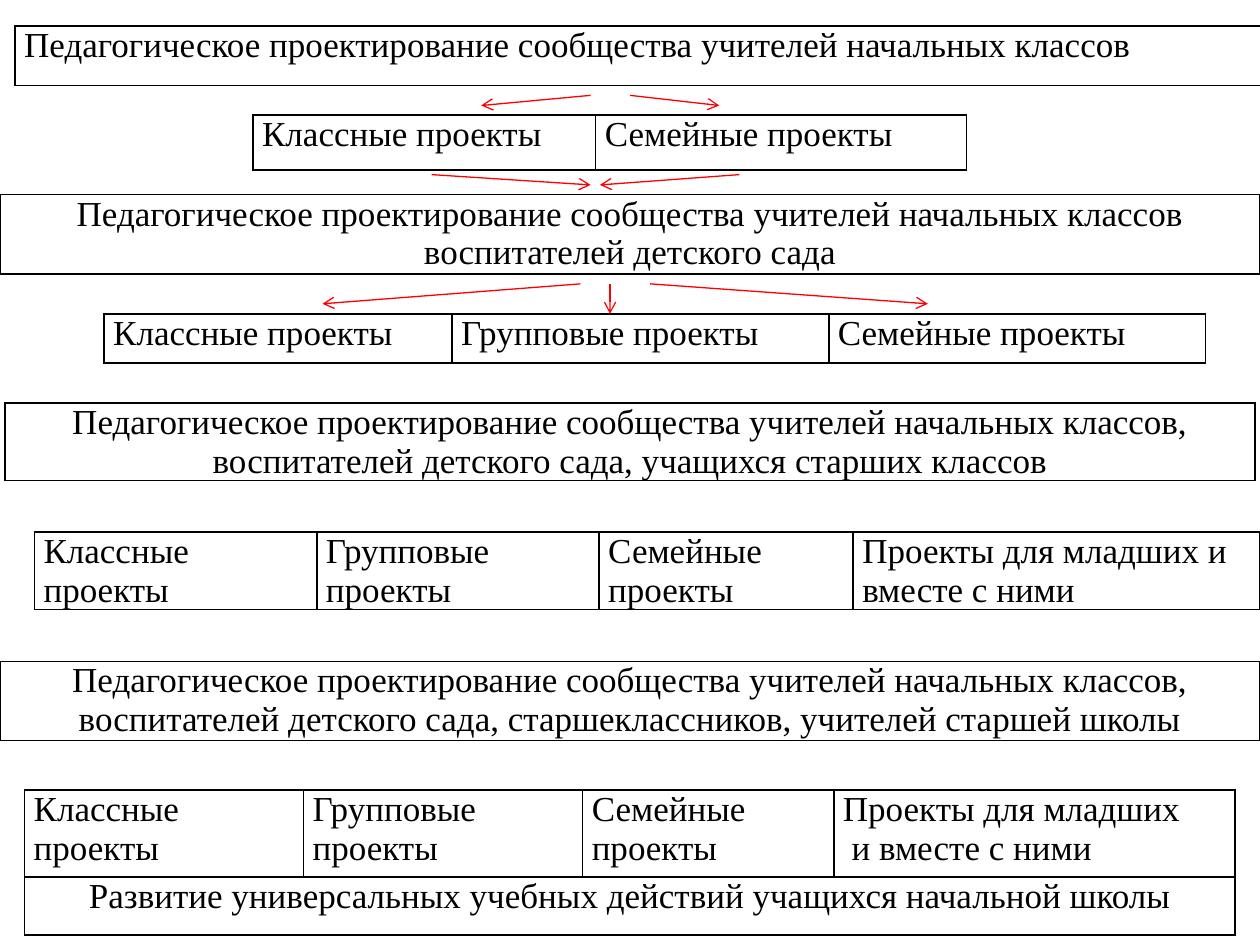
"""Build a slide of project stages as bordered tables joined by red arrows."""
import pptx
import pptx.dml.color
import pptx.enum.text
import pptx.oxml
import pptx.oxml.ns
import pptx.util

Pt = pptx.util.Pt
ALIGN = pptx.enum.text.PP_ALIGN

THEME = {
    "font": {"name": "Times New Roman", "size": Pt(20), "bold": False},
    "text": "000000",
    "border": "000000",
    "border_width": Pt(1),
    "arrow": "FF0000",
    "arrow_width": Pt(0.75),
    "cell": {"margin_left": Pt(5.2), "margin_right": Pt(5.2), "margin_top": 0, "margin_bottom": 0},
    "table": {"first_row": False, "horz_banding": False},
}

COMMUNITY = "Педагогическое проектирование сообщества учителей начальных классов"
CLASS, GROUP, FAMILY = "Классные проекты", "Групповые проекты", "Семейные проекты"

TABLES = [
    {"at": (8.6, 14.9), "columns": [720], "rows": [(33.9, ALIGN.LEFT, [COMMUNITY])]},
    {"at": (144.6, 65.7), "columns": [195.8, 211.9], "rows": [(31.5, ALIGN.LEFT, [CLASS, FAMILY])]},
    {"at": (0, 111.3), "columns": [720],
     "rows": [(45.4, ALIGN.CENTER, [COMMUNITY + " воспитателей детского сада"])]},
    {"at": (59.5, 179.3), "columns": [198.8, 215.3, 215.2],
     "rows": [(28.2, ALIGN.LEFT, [CLASS, GROUP, FAMILY])]},
    {"at": (2.9, 230.3), "columns": [714.3],
     "rows": [(44, ALIGN.CENTER, [COMMUNITY + ", воспитателей детского сада, учащихся старших классов"])]},
    {"at": (19.7, 304), "columns": [161.4, 161.3, 145.2, 232.4],
     "rows": [(44, ALIGN.LEFT, [CLASS, GROUP, FAMILY, "Проекты для младших и вместе с ними"])]},
    {"at": (0, 377.9), "columns": [720],
     "rows": [(45.4, ALIGN.CENTER,
               [COMMUNITY + ", воспитателей детского сада, старшеклассников, учителей старшей школы"])]},
    {"at": (14.1, 451.4), "columns": [159.4, 159.5, 143.5, 229.4],
     "rows": [(49.7, ALIGN.LEFT, [CLASS, GROUP, FAMILY, "Проекты для младших\n и вместе с ними"]),
              (33.1, ALIGN.CENTER,
               ["Развитие универсальных учебных действий учащихся начальной школы"])]},
]

ARROWS = [
    ((337.5, 54.5), (275, 60.3)),
    ((360, 54.5), (411, 60.3)),
    ((246.7, 99.8), (337.5, 105.7)),
    ((422.5, 99.8), (342.8, 105.7)),
    ((331.7, 162.2), (184.3, 173.6)),
    ((348.6, 162.2), (348.6, 179.3)),
    ((371.5, 162.2), (530.2, 173.6)),
]


def set_all(target, values):
    for name, value in values.items():
        setattr(target, name, value)


def add_borders(cell):
    properties = cell._tc.get_or_add_tcPr()
    for index, side in enumerate("LRTB"):
        properties.insert(index, pptx.oxml.parse_xml(
            f'<a:ln{side} {pptx.oxml.ns.nsdecls("a")} w="{THEME["border_width"]}"><a:solidFill>'
            f'<a:srgbClr val="{THEME["border"]}"/></a:solidFill></a:ln{side}>'))


def write_cell(cell, text, alignment):
    set_all(cell, THEME["cell"])
    cell.fill.background()
    cell.text = text
    for paragraph in cell.text_frame.paragraphs:
        paragraph.alignment = alignment
        for run in paragraph.runs:
            set_all(run.font, THEME["font"])
            run.font.color.rgb = pptx.dml.color.RGBColor.from_string(THEME["text"])


def add_grid(slide, at, columns, rows):
    size = (sum(columns), sum(height for height, _, _ in rows))
    shape = slide.shapes.add_table(len(rows), len(columns), *map(Pt, at + size))
    table = shape.table
    set_all(table, THEME["table"])
    for column, width in zip(table.columns, columns):
        column.width = Pt(width)
    for index, (height, alignment, texts) in enumerate(rows):
        table.rows[index].height = Pt(height)
        if len(texts) < len(columns):
            table.cell(index, 0).merge(table.cell(index, len(columns) - 1))
        for position in range(len(columns)):
            cell = table.cell(index, position)
            write_cell(cell, texts[position] if position < len(texts) else "", alignment)
            add_borders(cell)


def add_arrow(slide, start, end):
    connector = slide.shapes.add_connector(
        pptx.enum.shapes.MSO_CONNECTOR.STRAIGHT, *map(Pt, start + end))
    connector.line.width = THEME["arrow_width"]
    connector.line.color.rgb = pptx.dml.color.RGBColor.from_string(THEME["arrow"])
    namespace = pptx.oxml.ns.nsdecls("a")
    connector.line._get_or_add_ln().append(pptx.oxml.parse_xml(f'<a:tailEnd {namespace} type="arrow"/>'))
    connector._element.spPr.append(pptx.oxml.parse_xml(f"<a:effectLst {namespace}/>"))


def main():
    presentation = pptx.Presentation()
    set_all(presentation, {"slide_width": Pt(720), "slide_height": Pt(540)})
    slide = presentation.slides.add_slide(presentation.slide_layouts[6])
    for table in TABLES:
        add_grid(slide, **table)
    for start, end in ARROWS:
        add_arrow(slide, start, end)
    presentation.save("out.pptx")


if __name__ == "__main__":
    import pptx.enum.shapes
    main()
